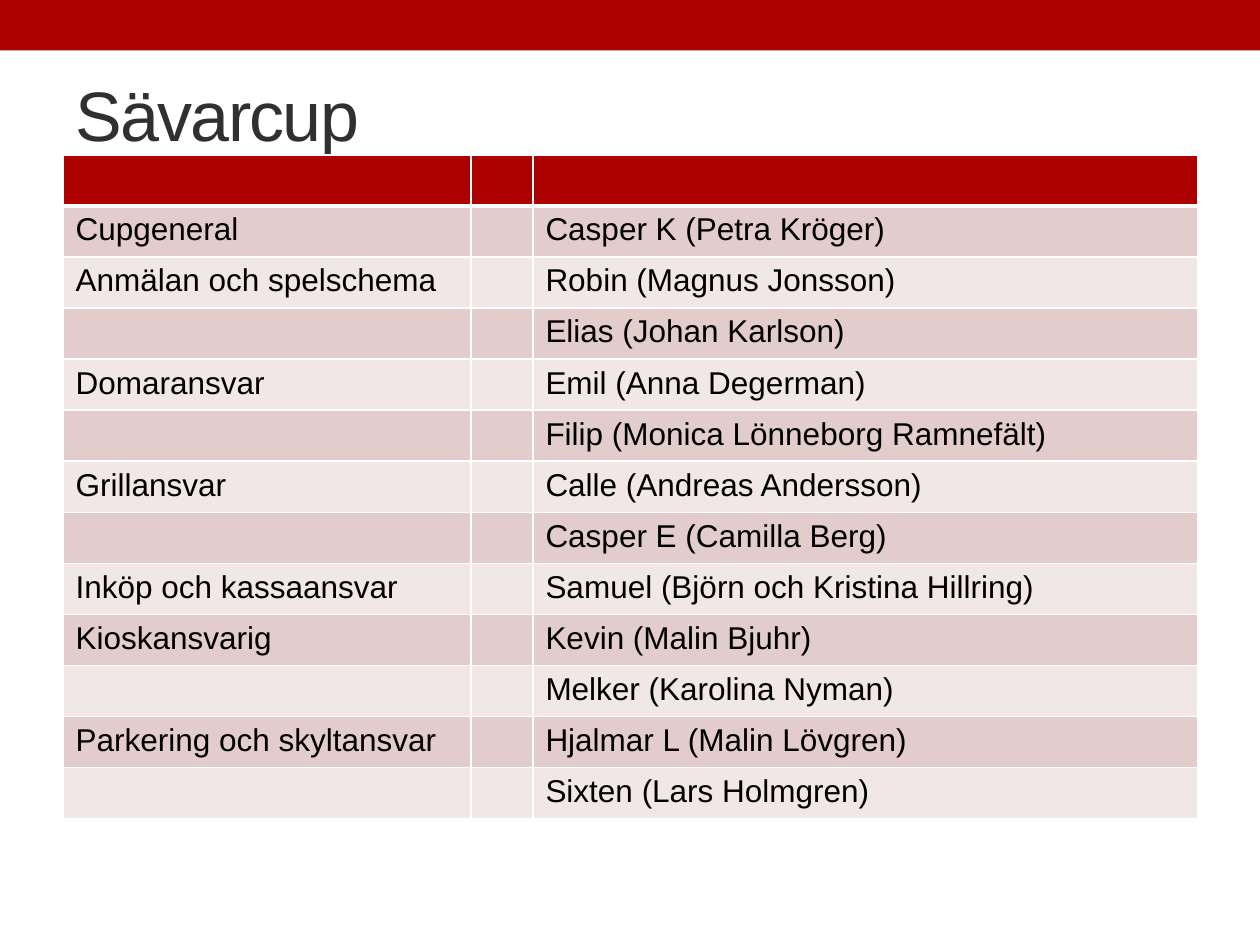
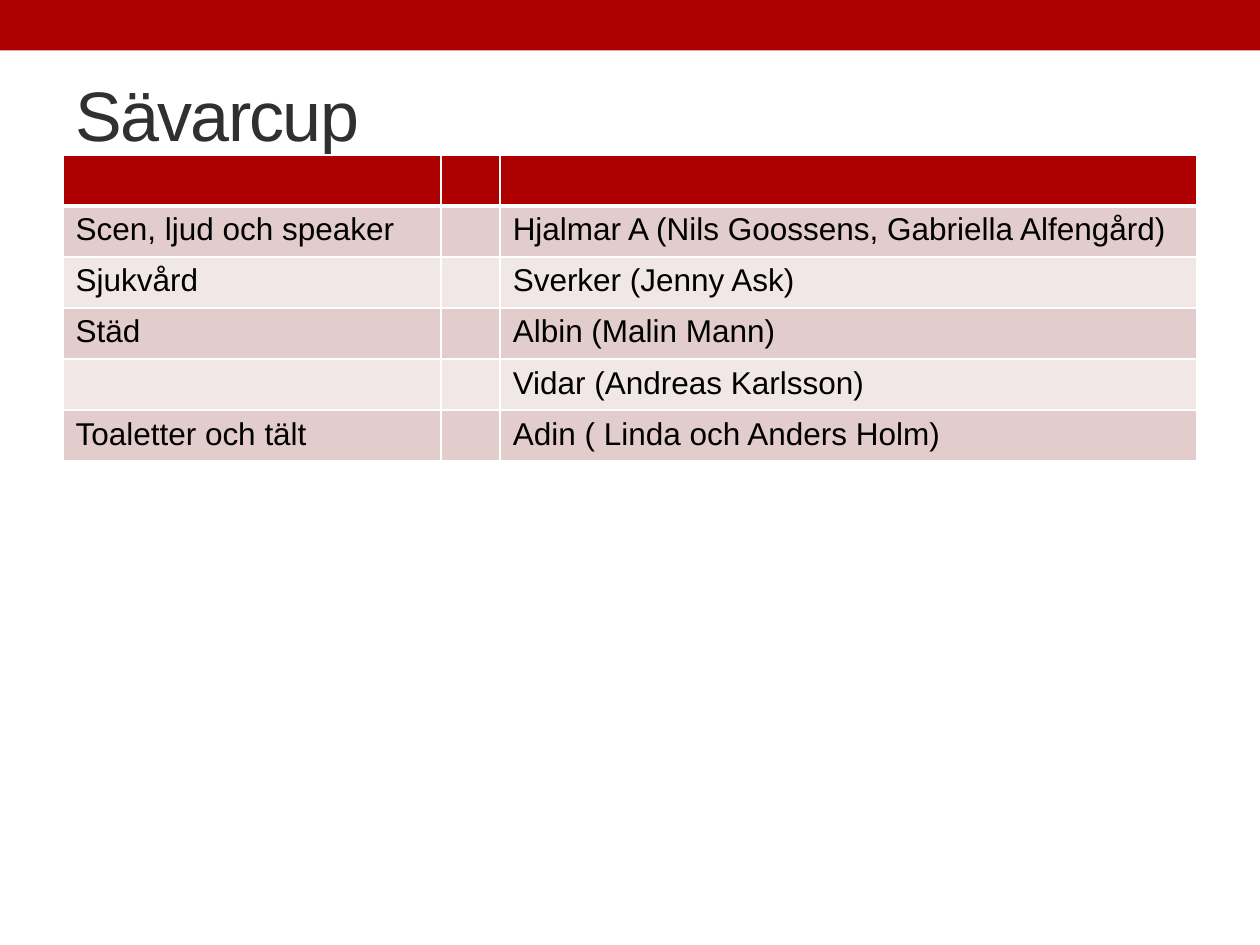
from pptx import Presentation
from pptx.dml.color import RGBColor
from pptx.enum.shapes import MSO_SHAPE
from pptx.enum.text import MSO_ANCHOR, PP_ALIGN
from pptx.oxml.ns import qn
from pptx.util import Inches, Pt
from lxml.etree import SubElement

RED, WHITE, BLACK, GREY = "AD0101", "FFFFFF", "000000", "303030"
ROW_FILLS = ("E3CCCC", "F1E7E7")
ROW_HEIGHT = Inches(5.27) // 13
BAND_BOX = (0, 0, 10, 0.4)
TITLE_BOX = (0.5, 0.36, 9, 1.08)
TABLE_PLACE = (0.5, 1.23)
TITLE_FORMAT = {"name": "Arial", "size": Pt(40), "bold": False}
CELL_FORMAT = {"name": "Arial", "size": Pt(18), "bold": False}

DUTIES = [
    ((3.24, 0.49, 5.28), [
        ("Cupgeneral", "Casper K (Petra Kröger)"),
        ("Anmälan och spelschema", "Robin (Magnus Jonsson)"),
        ("", "Elias (Johan Karlson)"),
        ("Domaransvar", "Emil (Anna Degerman)"),
        ("", "Filip (Monica Lönneborg Ramnefält)"),
        ("Grillansvar", "Calle (Andreas Andersson)"),
        ("", "Casper E (Camilla Berg)"),
        ("Inköp och kassaansvar", "Samuel (Björn och Kristina Hillring)"),
        ("Kioskansvarig", "Kevin (Malin Bjuhr)"),
        ("", "Melker (Karolina Nyman)"),
        ("Parkering och skyltansvar", "Hjalmar L (Malin Lövgren)"),
        ("", "Sixten (Lars Holmgren)"),
    ]),
    ((3, 0.47, 5.53), [
        ("Scen, ljud och speaker", "Hjalmar A (Nils Goossens, Gabriella Alfengård)"),
        ("Sjukvård", "Sverker (Jenny Ask)"),
        ("Städ", "Albin (Malin Mann)"),
        ("", "Vidar (Andreas Karlsson)"),
        ("Toaletter och tält", "Adin ( Linda och Anders Holm)"),
    ]),
]


def color(value):
    return RGBColor.from_string(value)


def paint(target, value):
    target.fill.solid()
    target.fill.fore_color.rgb = color(value)


def format_font(font, formats, value):
    for name, setting in formats.items():
        setattr(font, name, setting)
    font.color.rgb = color(value)


def add_band(page, box):
    band = page.shapes.add_shape(MSO_SHAPE.RECTANGLE, *map(Inches, box))
    band.shadow.inherit = False
    band.line.fill.background()
    paint(band, RED)


def set_title(page, box, text):
    title = page.shapes.title
    for name, length in zip(("left", "top", "width", "height"), box):
        setattr(title, name, Inches(length))
    title.text_frame.vertical_anchor = MSO_ANCHOR.MIDDLE
    para = title.text_frame.paragraphs[0]
    para.alignment = PP_ALIGN.LEFT
    span = para.add_run()
    span.text = text
    format_font(span.font, TITLE_FORMAT, GREY)
    span.font._element.set("spc", "-100")


def add_borders(cell, widths):
    properties = cell._tc.get_or_add_tcPr()
    for side, width in widths.items():
        line = SubElement(properties, qn(f"a:ln{side}"), w=str(Pt(width)))
        fill = SubElement(line, qn("a:solidFill"))
        SubElement(fill, qn("a:srgbClr"), val=WHITE)


def add_duty_table(page, place, widths, duties):
    rows = [("", "", "")] + [(duty, "", person) for duty, person in duties]
    left, top = map(Inches, place)
    table = page.shapes.add_table(len(rows), len(widths), left, top,
                                  Inches(sum(widths)), ROW_HEIGHT * len(rows)).table
    for column, width in zip(table.columns, widths):
        column.width = Inches(width)
    for index, texts in enumerate(rows):
        table.rows[index].height = ROW_HEIGHT
        borders = {"L": 1, "R": 1, "T": 3 if index == 1 else 1, "B": 1 if index else 3}
        for cell, text in zip(table.rows[index].cells, texts):
            add_borders(cell, borders)
            paint(cell, ROW_FILLS[(index - 1) % 2] if index else RED)
            cell.text = text
            format_font(cell.text_frame.paragraphs[0].font, CELL_FORMAT, BLACK)


def add_duty_page(deck, widths, duties):
    page = deck.slides.add_slide(deck.slide_layouts.get_by_name("Title Only"))
    add_band(page, BAND_BOX)
    set_title(page, TITLE_BOX, "Sävarcup")
    add_duty_table(page, TABLE_PLACE, widths, duties)


def main():
    deck = Presentation()
    deck.slide_width, deck.slide_height = Inches(10), Inches(7.5)
    for widths, duties in DUTIES:
        add_duty_page(deck, widths, duties)
    deck.save("out.pptx")


if __name__ == "__main__":
    main()
